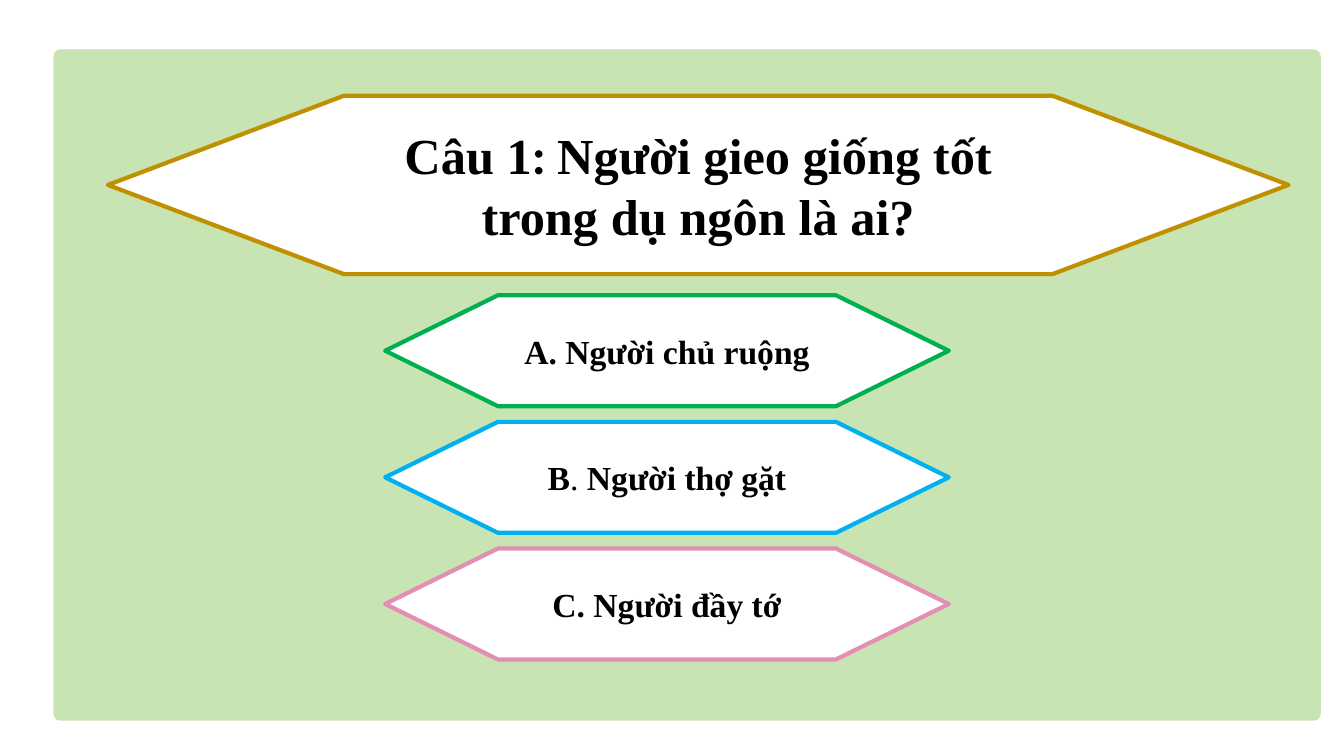
from pptx import Presentation
from pptx.dml.color import RGBColor
from pptx.enum.shapes import MSO_SHAPE
from pptx.enum.text import MSO_ANCHOR, MSO_AUTO_SIZE, PP_ALIGN
from pptx.util import Inches, Pt

HEX = MSO_SHAPE.FLOWCHART_PREPARATION
ROUND = MSO_SHAPE.ROUNDED_RECTANGLE
MIDDLE = MSO_ANCHOR.MIDDLE
CENTER = PP_ALIGN.CENTER
FIXED = MSO_AUTO_SIZE.NONE

THEME = {
    "panel": "C8E4B2", "white": "FFFFFF", "ink": "000000",
    "gold": "BF9000", "green": "00B050", "blue": "00B0F0", "pink": "E28FB3",
    "serif": "Times New Roman", "sans": "Calibri",
    "big": 36, "small": 24, "line": 3,
}

# Each run: text, font, bold
QUESTION = [
    ("Câu 1", "serif", True),
    (": ", "sans", True),
    ("Người gieo giống tốt trong dụ ngôn là ai?", "serif", True),
]
ANSWERS = [
    ("green", [("A. Người chủ ruộng", "serif", True)]),
    ("blue", [("B", "serif", True), (". ", "serif", False),
              ("Người thợ gặt", "serif", True)]),
    ("pink", [("C. Người đầy tớ", "serif", True)]),
]

# Left, top, width, height in inches
PANEL = (0.53, 0.49, 12.57, 6.66)
BANNER = (1.07, 0.95, 11.71, 1.77)
FIRST = (3.82, 2.93, 5.59, 1.1)
STEP = 1.256
CORNER = 0.07


def color(name):
    return RGBColor.from_string(THEME[name])


def add_form(slide, kind, box, fill, edge=None):
    form = slide.shapes.add_shape(kind, *map(Inches, box))
    form.shadow.inherit = False
    form.fill.solid()
    form.fill.fore_color.rgb = color(fill)
    if edge:
        form.line.color.rgb = color(edge)
        form.line.width = Pt(THEME["line"])
    else:
        form.line.fill.background()
    return form


def write(shape, runs, size):
    frame = shape.text_frame
    layout = {"word_wrap": True, "auto_size": FIXED, "vertical_anchor": MIDDLE}
    for key, value in layout.items():
        setattr(frame, key, value)
    para = frame.paragraphs[0]
    para.alignment = CENTER
    for text, face, bold in runs:
        run = para.add_run()
        run.text = text
        style = {"name": THEME[face], "size": Pt(THEME[size]), "bold": bold}
        for key, value in style.items():
            setattr(run.font, key, value)
        run.font.color.rgb = color("ink")


def place(shape, box):
    for key, value in zip(("left", "top", "width", "height"), box):
        setattr(shape, key, Inches(value))


def main():
    deck = Presentation()
    deck.slide_width, deck.slide_height = Inches(13.33), Inches(7.5)
    slide = deck.slides.add_slide(deck.slide_layouts[5])
    title = slide.shapes.title

    panel = add_form(slide, ROUND, PANEL, "panel")
    panel.adjustments[0] = CORNER / PANEL[3]

    banner = add_form(slide, HEX, BANNER, "white", "gold")
    left, top, width, height = BANNER
    # The flat part of the hexagon is the middle three fifths
    place(title, (left + width / 5, top, width * 3 / 5, height))
    write(title, QUESTION, "big")
    banner._element.addnext(title._element)

    left, top, width, height = FIRST
    for row, (edge, runs) in enumerate(ANSWERS):
        box = (left, top + row * STEP, width, height)
        write(add_form(slide, HEX, box, "white", edge), runs, "small")

    deck.save("out.pptx")


if __name__ == "__main__":
    main()
